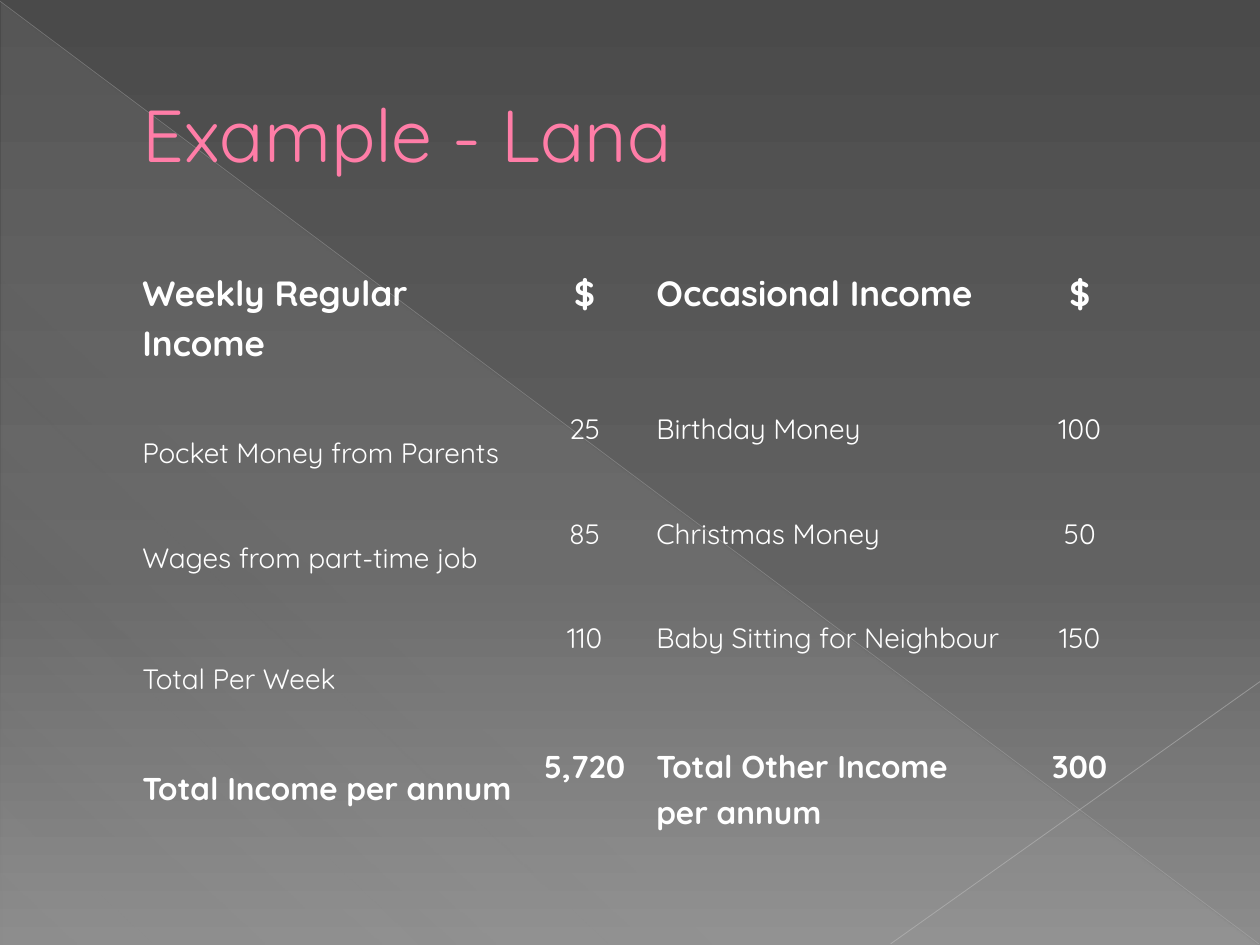
import pptx
import pptx.dml.color
import pptx.enum.shapes
import pptx.enum.text
import pptx.oxml
import pptx.oxml.ns
import pptx.util
from lxml import etree

Pt = pptx.util.Pt
qn = pptx.oxml.ns.qn
ALIGN = pptx.enum.text.PP_ALIGN
ANCHOR = pptx.enum.text.MSO_ANCHOR
SHAPE = pptx.enum.shapes.MSO_SHAPE
LINE = pptx.enum.shapes.MSO_CONNECTOR.STRAIGHT

FONT = "Quicksand"
WHITE = "FFFFFF"
PINK = "FF7DA7"
NO_STYLE_NO_GRID = "{2D5ABB26-0587-4C30-8999-92F81FD0307C}"

# Gradient stops: position %, colour, opacity %
BACKGROUND = [(0, "4A4A4A", 100), (60, "626262", 100), (100, "8C8C8C", 100)]
SHEEN = [(0, "D2D2D2", 10), (70, "D2D2D2", 8), (100, "D2D2D2", 1)]

# Start, end, colour, width, opacity %
DIAGONALS = [
    ((0, 0.7), (719.3, 539.3), "BFBFBF", 0.39, 35),
    ((720, 389.5), (509, 539.3), "C6C6C6", 0.47, 45),
]

TITLE = "Example - Lana"
ROWS = [
    ("Weekly Regular Income", "$", "Occasional Income", "$"),
    ("Pocket Money from Parents", "25", "Birthday Money", "100"),
    ("Wages from part-time job", "85", "Christmas Money", "50"),
    ("Total Per Week", "110", "Baby Sitting for Neighbour", "150"),
    ("Total Income per annum", "5,720", "Total Other Income per annum", "300"),
]
# Height, text size, bold, top inset, bottom inset of the first column
ROW_FORMATS = [
    (58, 20, True, 0, 0),
    (59.8, 16, False, 23, 0),
    (59.8, 16, False, 23, 0),
    (69, 16, False, 23, 0),
    (90, 18, True, 25.9, 25.9),
]
COLUMN_WIDTHS = [221.8, 72, 206.6, 80.6]
TABLE_LEFT, TABLE_TOP = 76.3, 151.2


def rgb(colour):
    return pptx.dml.color.RGBColor.from_string(colour)


def add_alpha(colour_element, opacity):
    etree.SubElement(colour_element, qn("a:alpha"), val=str(opacity * 1000))


def set_gradient(fill, holder, stops, angle):
    """Fill with stops, at an angle in degrees clockwise."""
    fill.gradient()
    gradient = holder.find(".//" + qn("a:gradFill"))
    for child in list(gradient):
        gradient.remove(child)
    stop_list = etree.SubElement(gradient, qn("a:gsLst"))
    for position, colour, opacity in stops:
        stop = etree.SubElement(stop_list, qn("a:gs"), pos=str(position * 1000))
        add_alpha(etree.SubElement(stop, qn("a:srgbClr"), val=colour), opacity)
    etree.SubElement(gradient, qn("a:lin"), ang=str(angle * 60000), scaled="0")


def style_paragraph(para, size, colour, bold=False):
    para.font.name = FONT
    para.font.size = Pt(size)
    para.font.bold = bold
    para.font.color.rgb = rgb(colour)


def add_backdrop(page):
    set_gradient(page.background.fill, page.element, BACKGROUND, 90)
    triangle = page.shapes.add_shape(
        SHAPE.RIGHT_TRIANGLE, Pt(0.7), Pt(1.4), Pt(718.6), Pt(538.6))
    triangle.shadow.inherit = False
    triangle.line.fill.background()
    set_gradient(triangle.fill, triangle.element, SHEEN, 133)
    for start, end, colour, width, opacity in DIAGONALS:
        diagonal = page.shapes.add_connector(
            LINE, *(Pt(value) for value in start + end))
        diagonal.line.width = Pt(width)
        diagonal.line.color.rgb = rgb(colour)
        properties = diagonal.element.find(qn("p:spPr"))
        add_alpha(properties.find(".//" + qn("a:srgbClr")), opacity)
        etree.SubElement(properties, qn("a:effectLst"))


def add_title(page):
    box = page.shapes.add_textbox(Pt(36), Pt(20.9), Pt(648), Pt(110.2))
    frame = box.text_frame
    frame.word_wrap = True
    frame.vertical_anchor = ANCHOR.MIDDLE
    frame.margin_left = Pt(45.4)
    frame.text = TITLE
    style_paragraph(frame.paragraphs[0], 42, PINK)


def add_income_table(page):
    heights = [row_format[0] for row_format in ROW_FORMATS]
    holder = page.shapes.add_table(
        len(ROWS), len(COLUMN_WIDTHS), Pt(TABLE_LEFT), Pt(TABLE_TOP),
        Pt(sum(COLUMN_WIDTHS)), Pt(sum(heights)))
    holder.element.find(".//" + qn("a:tableStyleId")).text = NO_STYLE_NO_GRID
    table = holder.table
    table.first_row = table.horz_banding = False
    for column, width in zip(table.columns, COLUMN_WIDTHS):
        column.width = Pt(width)
    for r, (texts, row_format) in enumerate(zip(ROWS, ROW_FORMATS)):
        height, size, bold, top, bottom = row_format
        table.rows[r].height = Pt(height)
        for c, text in enumerate(texts):
            cell = table.cell(r, c)
            cell.fill.background()
            cell.margin_left = cell.margin_right = Pt(5)
            at_bottom = c == 0 and r > 0
            cell.vertical_anchor = ANCHOR.BOTTOM if at_bottom else ANCHOR.TOP
            cell.margin_top = Pt(top)
            cell.margin_bottom = Pt(bottom if at_bottom else 0)
            cell.text = text
            para = cell.text_frame.paragraphs[0]
            para.alignment = ALIGN.CENTER if c % 2 else ALIGN.LEFT
            para.line_spacing = 1.15
            style_paragraph(para, size, WHITE, bold)


def main():
    deck = pptx.Presentation()
    deck.slide_width, deck.slide_height = Pt(720), Pt(540)
    page = deck.slides.add_slide(deck.slide_layouts[6])
    add_backdrop(page)
    add_title(page)
    add_income_table(page)
    deck.save("out.pptx")


if __name__ == "__main__":
    main()
